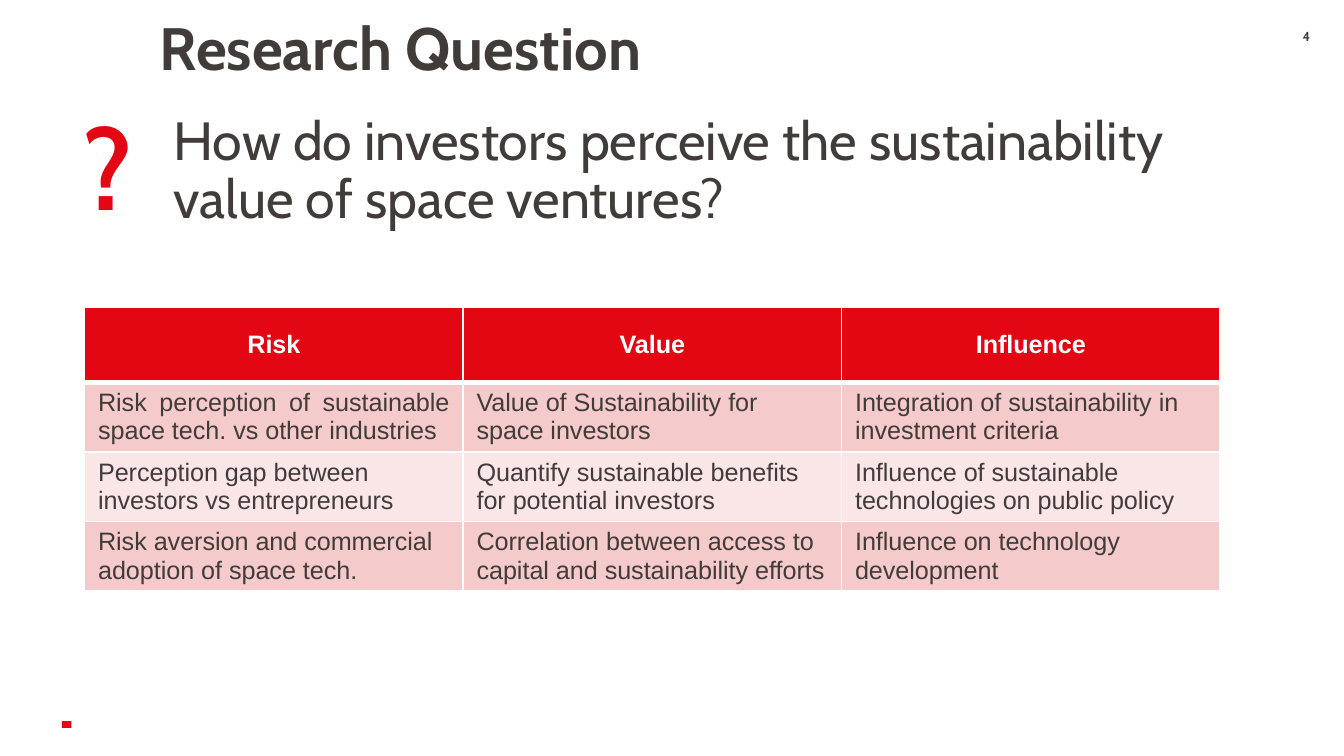
"""Build the research question slide with its table of risk, value and influence."""
import lxml.etree
import pptx
import pptx.dml.color
import pptx.enum.shapes
import pptx.enum.text
import pptx.oxml.ns
import pptx.util

Cm = pptx.util.Cm
Pt = pptx.util.Pt
Align = pptx.enum.text.PP_ALIGN
Anchor = pptx.enum.text.MSO_ANCHOR

HEADERS = ["Risk", "Value", "Influence"]
TOPICS = [
    ["Risk perception of sustainable space tech. vs other industries",
     "Value of Sustainability for space investors",
     "Integration of sustainability in investment criteria"],
    ["Perception gap between investors vs entrepreneurs",
     "Quantify sustainable benefits for potential investors",
     "Influence of sustainable technologies on public policy"],
    ["Risk aversion and commercial adoption of space tech.",
     "Correlation between access to capital and sustainability efforts",
     "Influence on technology development"],
]


def color(value):
    return pptx.dml.color.RGBColor.from_string(value)


def write(frame, text, *, size, fill, font="Cabin", bold=False,
          align=Align.LEFT, spacing=1.0):
    paragraph = frame.paragraphs[0]
    paragraph.alignment = align
    paragraph.line_spacing = spacing
    run = paragraph.add_run()
    run.text = text
    run.font.name = font
    run.font.size = Pt(size)
    run.font.bold = bold
    run.font.color.rgb = color(fill)


class SlideBuilder:
    RED = "E30613"
    DARK = "413C3A"
    WHITE = "FFFFFF"
    BANDS = ["F4CACA", "FAE6E6"]
    HEADING_INSETS = (0.51, 0, 0.2, 0.13)

    def __init__(self, slide):
        self.slide = slide

    def place(self, shape, box, insets):
        shape.left, shape.top, shape.width, shape.height = map(Cm, box)
        frame = shape.text_frame
        frame.word_wrap = True
        frame.auto_size = pptx.enum.text.MSO_AUTO_SIZE.NONE
        frame.vertical_anchor = Anchor.TOP
        (frame.margin_left, frame.margin_top,
         frame.margin_right, frame.margin_bottom) = map(Cm, insets)
        return frame

    def title(self, text, box, size):
        frame = self.place(self.slide.shapes.title, box, self.HEADING_INSETS)
        write(frame, text, size=size, fill=self.DARK, bold=True, spacing=0.9)

    def text(self, text, box, insets=HEADING_INSETS, **style):
        shape = self.slide.shapes.add_textbox(*map(Cm, box))
        write(self.place(shape, box, insets), text, **style)

    def block(self, box):
        shape = self.slide.shapes.add_shape(
            pptx.enum.shapes.MSO_SHAPE.RECTANGLE, *map(Cm, box))
        shape.shadow.inherit = False
        shape.fill.solid()
        shape.fill.fore_color.rgb = color(self.RED)
        shape.line.fill.background()

    def borders(self, cell, top, bottom):
        properties = cell._tc.get_or_add_tcPr()
        for side, width in (("L", 1), ("R", 1), ("T", top), ("B", bottom)):
            line = lxml.etree.SubElement(
                properties, pptx.oxml.ns.qn(f"a:ln{side}"), w=str(Pt(width)))
            solid = lxml.etree.SubElement(line, pptx.oxml.ns.qn("a:solidFill"))
            lxml.etree.SubElement(
                solid, pptx.oxml.ns.qn("a:srgbClr"), val=self.WHITE)

    def table(self, headers, rows, box, header_height, row_height):
        shape = self.slide.shapes.add_table(
            len(rows) + 1, len(headers), *map(Cm, box))
        table = shape.table
        for column in table.columns:
            column.width = Cm(box[2] / len(headers))
        for index, texts in enumerate([headers, *rows]):
            is_header = index == 0
            table.rows[index].height = Cm(header_height if is_header else row_height)
            for position, text in enumerate(texts):
                cell = table.cell(index, position)
                self.borders(cell, 3 if index == 1 else 1, 3 if is_header else 1)
                cell.fill.solid()
                cell.fill.fore_color.rgb = color(
                    self.RED if is_header else self.BANDS[(index - 1) % 2])
                cell.vertical_anchor = Anchor.MIDDLE if is_header else Anchor.TOP
                align = Align.CENTER if is_header else Align.LEFT
                if (index, position) == (1, 0):
                    align = Align.JUSTIFY
                write(cell.text_frame, text, size=13.5, font="Arial",
                      fill=self.WHITE if is_header else self.DARK,
                      bold=is_header, align=align)


def main():
    presentation = pptx.Presentation()
    presentation.slide_width = Cm(25.4)
    presentation.slide_height = Cm(14.29)
    slide = presentation.slides.add_slide(presentation.slide_layouts[5])
    builder = SlideBuilder(slide)
    builder.block((1.17, 13.63, 0.18, 0.13))
    builder.title("Research Question", (2.51, 0.36, 14, 2.97), 32)
    builder.text("4", (23.98, 0.53, 1.42, 0.46), (0.25, 0, 0.25, 0),
                 size=7, fill=builder.DARK, bold=True, align=Align.CENTER)
    builder.text("?", (1.07, 2.16, 2.9, 2.97),
                 size=60, fill=builder.RED, bold=True, spacing=0.9)
    builder.text("How do investors perceive the sustainability value of space ventures?",
                 (2.77, 2.16, 19.86, 2.97),
                 size=28.8, fill=builder.DARK, spacing=0.9)
    builder.table(HEADERS, TOPICS, (1.6, 5.8, 21.46, 5.36), 1.43, 1.31)
    presentation.save("out.pptx")


if __name__ == "__main__":
    main()
